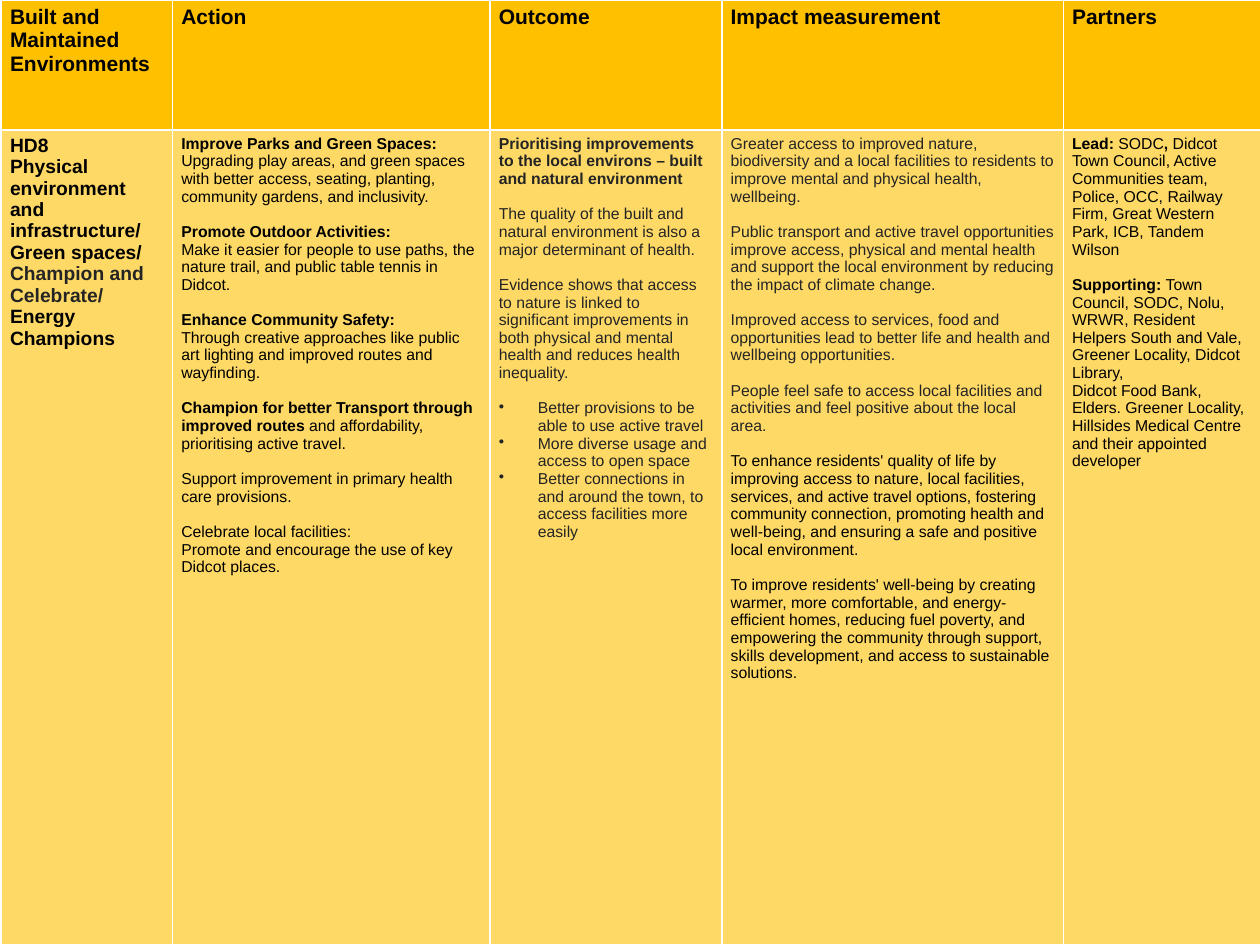
import pptx
import pptx.dml.color
import pptx.oxml.ns
import pptx.util
from lxml import etree
from pptx.dml.color import RGBColor
from pptx.util import Inches, Pt

BLACK = RGBColor(0x00, 0x00, 0x00)
CHARCOAL = RGBColor(0x24, 0x24, 0x24)
AMBER = RGBColor(0xFF, 0xC0, 0x00)
PALE_AMBER = RGBColor(0xFF, 0xD9, 0x66)

# Run styles: bold, colour
PLAIN = (False, BLACK)
BOLD = (True, BLACK)
GREY = (False, CHARCOAL)
GREY_BOLD = (True, CHARCOAL)

HEADER_SIZE, THEME_SIZE, BODY_SIZE = 12, 11, 9
BLOCK_GAP = Pt(10.1)
BULLET = "• "

COLUMN_WIDTHS = [1.36, 2.52, 1.84, 2.71, 1.57]
ROW_HEIGHTS = [1.03, 6.47]
HEADERS = ["Built and Maintained Environments", "Action", "Outcome",
           "Impact measurement", "Partners"]

# A cell is a list of blocks, a block a list of paragraphs,
# and a paragraph a list of (style, text) runs.
THEME = [[
    [(BOLD, "HD8")],
    [(BOLD, "Physical environment and infrastructure/")],
    [(BOLD, "Green spaces/")],
    [(GREY_BOLD, "Champion and Celebrate/")],
    [(BOLD, "Energy Champions")],
]]

ACTION = [
    [[(BOLD, "Improve Parks and Green Spaces:")],
     [(PLAIN, "Upgrading play areas, and green spaces with better access, seating, "
              "planting, community gardens, and inclusivity.")]],
    [[(BOLD, "Promote Outdoor Activities:")],
     [(PLAIN, "Make it easier for people to use paths, the nature trail, and public "
              "table tennis in Didcot.")]],
    [[(BOLD, "Enhance Community Safety:")],
     [(PLAIN, "Through creative approaches like public art lighting and improved "
              "routes and wayfinding.")]],
    [[(BOLD, "Champion for better Transport through improved routes"),
      (PLAIN, " and affordability, prioritising active travel.")]],
    [[(PLAIN, "Support improvement in primary health care provisions.")]],
    [[(PLAIN, "Celebrate local facilities:")],
     [(PLAIN, "Promote and encourage the use of key Didcot places.")]],
]

OUTCOME = [
    [[(GREY_BOLD, "Prioritising improvements to the local environs – built and "
                  "natural environment")]],
    [[(GREY, "The quality of the built and natural environment is also a major "
             "determinant of health.")]],
    [[(GREY, "Evidence shows that access to nature is linked to significant "
             "improvements in both physical and mental health and reduces health "
             "inequality.")]],
    [[(GREY, BULLET + "Better provisions to be able to use active travel")],
     [(GREY, BULLET + "More diverse usage and access to open space")],
     [(GREY, BULLET + "Better connections in and around the town, to access "
                      "facilities more easily")]],
]

IMPACT = [
    [[(GREY, "Greater access to improved nature, biodiversity and a local facilities "
             "to residents to improve mental and physical health, wellbeing.")]],
    [[(GREY, "Public transport and active travel opportunities improve access, "
             "physical and mental health and support the local environment by "
             "reducing the impact of climate change.")]],
    [[(GREY, "Improved access to services, food and opportunities lead to better "
             "life and health and wellbeing opportunities.")]],
    [[(GREY, "People feel safe to access local facilities and activities and feel "
             "positive about the local area.")]],
    [[(PLAIN, "To enhance residents' quality of life by improving access to nature, "
              "local facilities, services, and active travel options, fostering "
              "community connection, promoting health and well-being, and ensuring "
              "a safe and positive local environment.")]],
    [[(PLAIN, "To improve residents' well-being by creating warmer, more "
              "comfortable, and energy-efficient homes, reducing fuel poverty, and "
              "empowering the community through support, skills development, and "
              "access to sustainable solutions.")]],
]

PARTNERS = [
    [[(BOLD, "Lead: "), (PLAIN, "SODC"), (BOLD, ","),
      (PLAIN, " Didcot Town Council, Active Communities team, Police, OCC, Railway "
              "Firm, Great Western Park, ICB, Tandem Wilson")]],
    [[(BOLD, "Supporting: "),
      (PLAIN, "Town Council, SODC, Nolu, WRWR, Resident Helpers South and Vale, "
              "Greener Locality, Didcot Library,")],
     [(PLAIN, "Didcot Food Bank,")],
     [(PLAIN, "Elders. Greener Locality, Hillsides Medical Centre and their "
              "appointed developer")]],
]


def add_bullet(paragraph):
    properties = paragraph._p.get_or_add_pPr()
    properties.set("marL", str(Inches(0.31)))
    properties.set("indent", str(Inches(-0.31)))
    bullet = etree.SubElement(properties, pptx.oxml.ns.qn("a:buChar"))
    bullet.set("char", BULLET.strip())


def fill_cell(cell, blocks, size, color):
    """Write the blocks into the cell, with a one-line gap between blocks."""
    cell.fill.solid()
    cell.fill.fore_color.rgb = color
    cell.margin_left = cell.margin_right = Inches(0.07)
    cell.margin_top = cell.margin_bottom = Inches(0.04)
    paragraph = None
    for block in blocks:
        for position, runs in enumerate(block):
            if paragraph is None:
                paragraph = cell.text_frame.paragraphs[0]
            else:
                paragraph = cell.text_frame.add_paragraph()
                if position == 0:
                    paragraph.space_before = BLOCK_GAP
            if runs[0][1].startswith(BULLET):
                add_bullet(paragraph)
            for (bold, text_color), text in runs:
                run = paragraph.add_run()
                run.text = text.removeprefix(BULLET)
                run.font.name = "Arial"
                run.font.size = Pt(size)
                run.font.bold = bold
                run.font.color.rgb = text_color


presentation = pptx.Presentation()
presentation.slide_width = Inches(10)
presentation.slide_height = Inches(7.5)
slide = presentation.slides.add_slide(presentation.slide_layouts[6])

table = slide.shapes.add_table(
    len(ROW_HEIGHTS), len(COLUMN_WIDTHS), Inches(0.01), Inches(0),
    Inches(sum(COLUMN_WIDTHS)), Inches(sum(ROW_HEIGHTS))).table
for column, width in zip(table.columns, COLUMN_WIDTHS):
    column.width = Inches(width)
for row, height in zip(table.rows, ROW_HEIGHTS):
    row.height = Inches(height)

for index, header in enumerate(HEADERS):
    fill_cell(table.cell(0, index), [[[(BOLD, header)]]], HEADER_SIZE, AMBER)
for index, blocks in enumerate([THEME, ACTION, OUTCOME, IMPACT, PARTNERS]):
    size = THEME_SIZE if index == 0 else BODY_SIZE
    fill_cell(table.cell(1, index), blocks, size, PALE_AMBER)

presentation.save("out.pptx")
